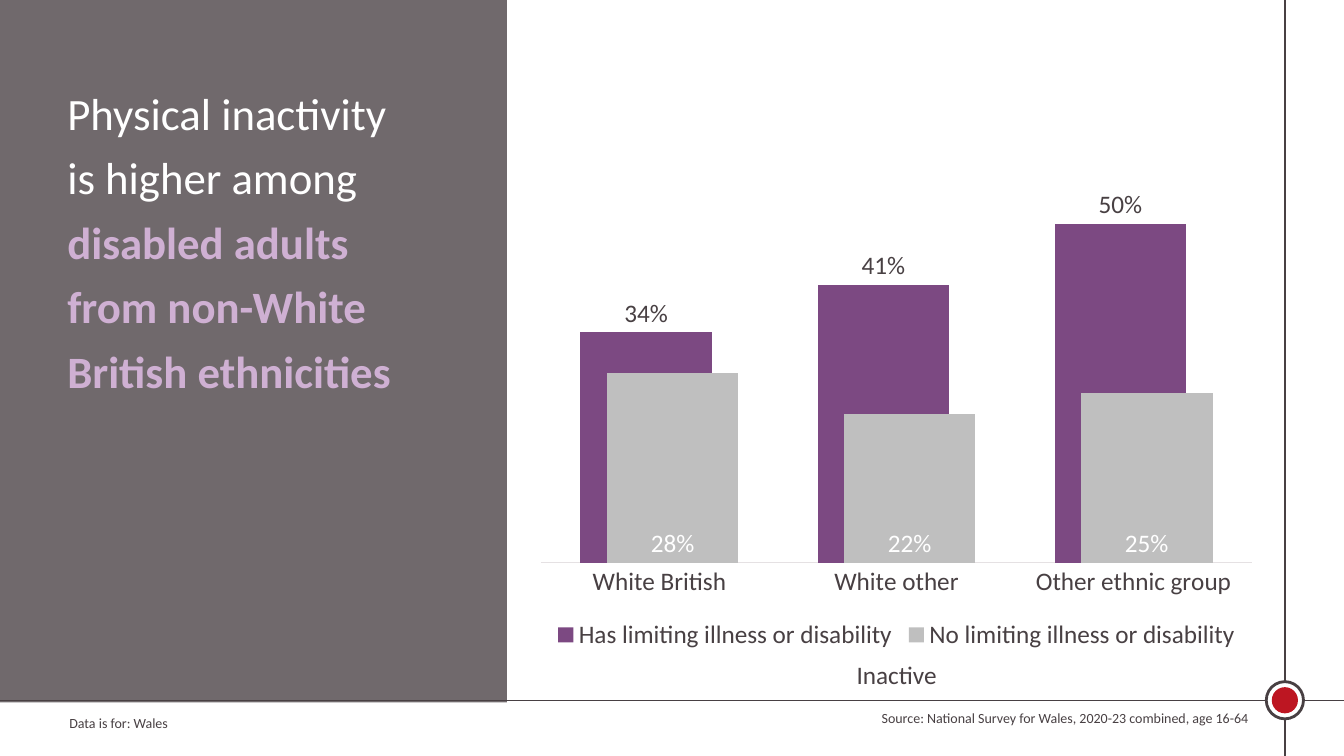
"""Build the slide on physical inactivity by ethnicity and disability."""
from collections import namedtuple
from dataclasses import dataclass

from lxml.etree import SubElement
from pptx import Presentation
from pptx.chart.data import CategoryChartData
from pptx.dml.color import RGBColor
from pptx.enum.chart import XL_CHART_TYPE, XL_LABEL_POSITION, XL_LEGEND_POSITION, XL_TICK_MARK
from pptx.enum.shapes import MSO_CONNECTOR, MSO_SHAPE
from pptx.enum.text import PP_ALIGN
from pptx.oxml.ns import qn
from pptx.util import Pt

Box = namedtuple("Box", "left top width height")


@dataclass(frozen=True)
class Theme:
    """Hold the colours, typeface and type sizes of the slide."""

    ink: RGBColor = RGBColor.from_string("484043")
    white: RGBColor = RGBColor.from_string("FFFFFF")
    lilac: RGBColor = RGBColor.from_string("CFB0D3")
    purple: RGBColor = RGBColor.from_string("7C4982")
    grey: RGBColor = RGBColor.from_string("BFBFBF")
    axis: RGBColor = RGBColor.from_string("E5E1E3")
    red: RGBColor = RGBColor.from_string("BD1622")
    typeface: str = "Calibri"
    headline: int = 32
    body: int = 18
    note: int = 10


THEME = Theme()


def lengths(box):
    """Return the four measures of a box as point lengths."""
    return [Pt(measure) for measure in box]


def style_font(font, size, color):
    """Set typeface, size and colour on a font."""
    font.name = THEME.typeface
    font.size = Pt(size)
    font.color.rgb = color


def add_text(slide, box, text, size, color, align=PP_ALIGN.LEFT):
    """Add a wrapped text box with one paragraph and return the paragraph."""
    frame = slide.shapes.add_textbox(*lengths(box)).text_frame
    frame.word_wrap = True
    para = frame.paragraphs[0]
    para.alignment = align
    para.add_run().text = text
    style_font(para.font, size, color)
    return para


def add_filled(shapes, kind, box, color):
    """Add a preset shape with a plain fill and no outline or shadow."""
    shape = shapes.add_shape(kind, *lengths(box))
    shape.shadow.inherit = False
    shape.fill.solid()
    shape.fill.fore_color.rgb = color
    shape.line.fill.background()
    return shape


def add_rule(slide, start, end):
    """Add a thin dark line between two points."""
    rule = slide.shapes.add_connector(MSO_CONNECTOR.STRAIGHT, *lengths(start + end))
    rule.line.color.rgb = THEME.ink
    rule.line.width = Pt(1)
    SubElement(rule.element.spPr, qn("a:effectLst"))


def add_frame(slide, box, cross_x, cross_y):
    """Add the crossing rules and the round marker where they meet."""
    right, bottom = box.left + box.width, box.top + box.height
    add_rule(slide, (cross_x, box.top), (cross_x, bottom))
    add_rule(slide, (box.left, cross_y), (right, cross_y))
    marker = slide.shapes.add_group_shape()
    for diameter, color in ((26.6, THEME.white), (18.7, THEME.red)):
        radius = diameter / 2
        disc_box = Box(cross_x - radius, cross_y - radius, diameter, diameter)
        disc = add_filled(marker.shapes, MSO_SHAPE.OVAL, disc_box, color)
        if color == THEME.white:
            disc.line.color.rgb = THEME.ink
            disc.line.width = Pt(2)


def add_headline_panel(slide, box):
    """Add the translucent panel with the headline on it."""
    panel = add_filled(slide.shapes, MSO_SHAPE.RECTANGLE, box, THEME.ink)
    color = panel.element.spPr.find(qn("a:solidFill"))[0]
    SubElement(color, qn("a:alpha"), val="78000")
    para = add_text(
        slide, Box(box.left + 41.7, box.top + 49.7, 268.6, 271.4),
        "Physical inactivity is higher among ", THEME.headline, THEME.white,
    )
    para.line_spacing = 1.2
    emphasis = para.add_run()
    emphasis.text = "disabled adults from non-White British ethnicities"
    emphasis.font.bold = True
    emphasis.font.color.rgb = THEME.lilac


def style_series(series, fill, label_color, label_position):
    """Colour a column series and place its percentage labels."""
    series.format.fill.solid()
    series.format.fill.fore_color.rgb = fill
    series.invert_if_negative = False
    labels = series.data_labels
    labels.show_value = True
    labels.number_format = "0%"
    labels.number_format_is_linked = False
    labels.position = label_position
    style_font(labels.font, THEME.body, label_color)


def add_inactivity_chart(slide, box):
    """Add the overlapping column chart and its caption underneath."""
    caption_box = Box(box.left + 229, box.top + box.height - 0.7, 87.8, 28.8)
    add_text(slide, caption_box, "Inactive", THEME.body, THEME.ink)
    values = CategoryChartData(number_format="0%")
    values.categories = ["White British", "White other", "Other ethnic group"]
    values.add_series("Has limiting illness or disability", (0.34, 0.41, 0.5))
    values.add_series("No limiting illness or disability", (0.28, 0.22, 0.25))
    chart = slide.shapes.add_chart(
        XL_CHART_TYPE.COLUMN_CLUSTERED, *lengths(box), values
    ).chart
    style_font(chart.font, THEME.body, THEME.ink)
    chart.has_title = False
    chart.has_legend = True
    chart.legend.position = XL_LEGEND_POSITION.BOTTOM
    chart.legend.include_in_layout = False
    style_font(chart.legend.font, THEME.body, THEME.ink)

    categories = chart.category_axis
    categories.major_tick_mark = XL_TICK_MARK.NONE
    categories.format.line.color.rgb = THEME.axis
    categories.format.line.width = Pt(0.75)
    style_font(categories.tick_labels.font, THEME.body, THEME.ink)
    scale = chart.value_axis
    scale.minimum_scale, scale.maximum_scale = 0, 0.6
    scale.has_major_gridlines = False
    scale.visible = False

    plot = chart.plots[0]
    plot.vary_by_categories = False
    plot.gap_width = 60
    plot.overlap = 80
    disabled, others = plot.series
    style_series(disabled, THEME.purple, THEME.ink, XL_LABEL_POSITION.OUTSIDE_END)
    style_series(others, THEME.grey, THEME.white, XL_LABEL_POSITION.INSIDE_BASE)


def add_footer(slide, box):
    """Add the coverage note on the left and the source on the right."""
    add_text(slide, Box(box.left, box.top + 3.6, 316, box.height),
             "Data is for: Wales", THEME.note, THEME.ink)
    source_width = 299.5
    add_text(slide, Box(box.left + box.width - source_width, box.top, source_width, box.height),
             "Source: National Survey for Wales, 2020-23 combined, age 16-64",
             THEME.note, THEME.ink, PP_ALIGN.RIGHT)


def main():
    """Build the deck and save it."""
    deck = Presentation()
    page = Box(0, 0, 960, 540)
    deck.slide_width, deck.slide_height = Pt(page.width), Pt(page.height)
    slide = deck.slides.add_slide(deck.slide_layouts[6])
    add_frame(slide, page, 917.8, 500.2)
    add_headline_panel(slide, Box(-0.7, 0, 362.9, 501.8))
    add_footer(slide, Box(42.5, 503.3, 856.1, 19.4))
    add_inactivity_chart(slide, Box(375.8, 104.4, 529.2, 363.6))
    deck.save("out.pptx")


if __name__ == "__main__":
    main()
